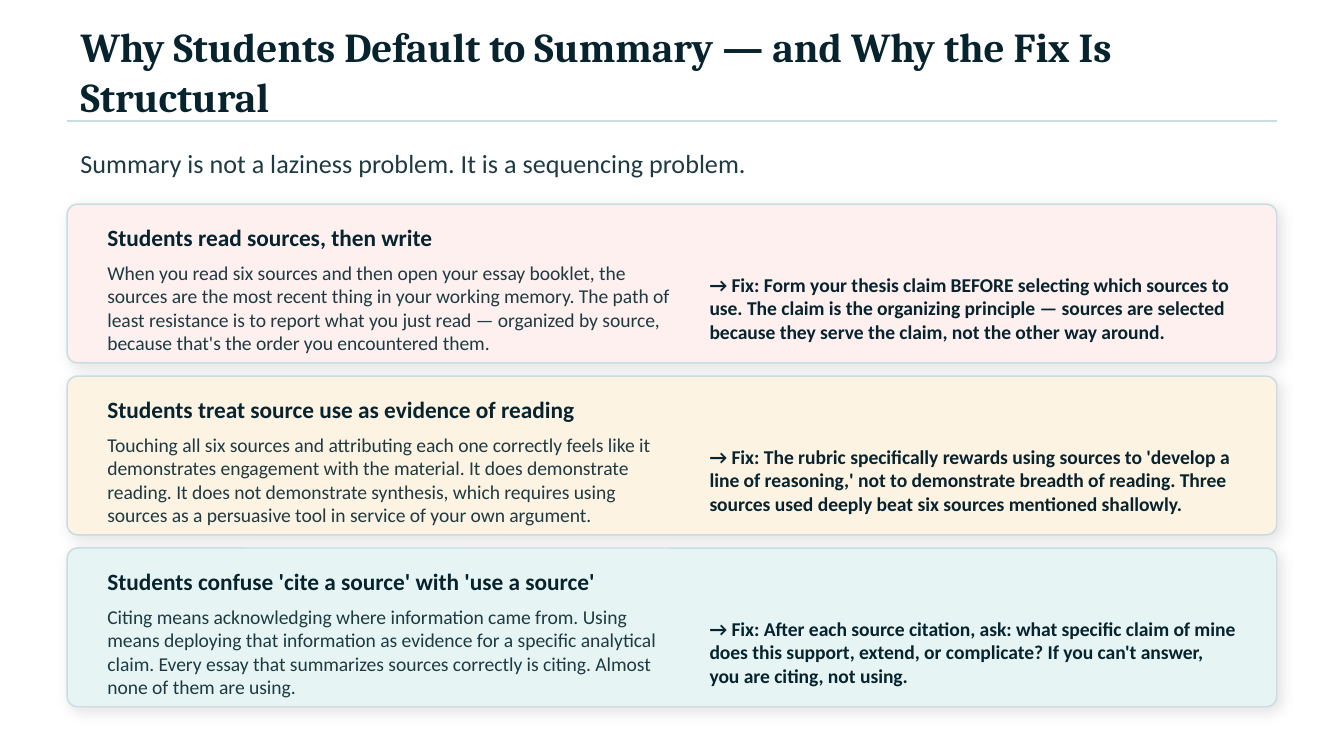
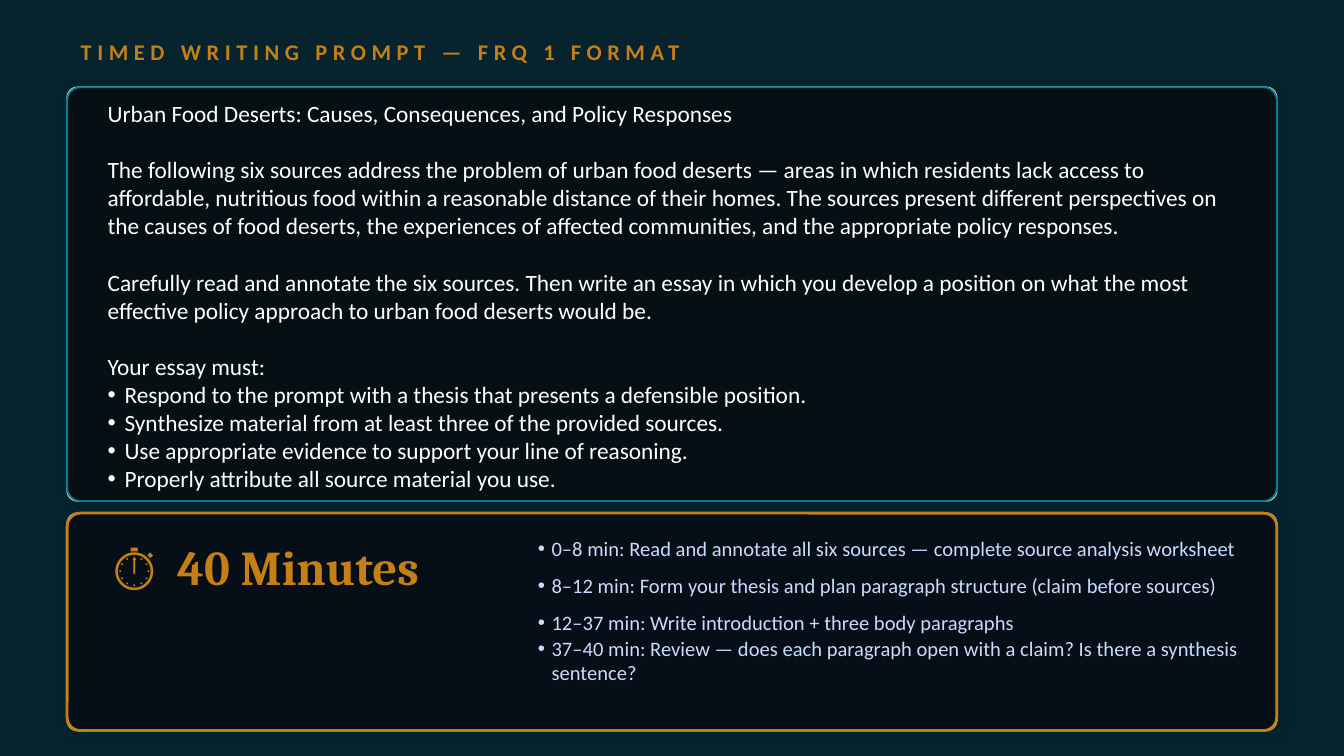
from dataclasses import dataclass

from lxml.etree import SubElement as Sub
from pptx import Presentation
from pptx.dml.color import RGBColor as Rgb
from pptx.enum.shapes import MSO_CONNECTOR as Link, MSO_SHAPE as Form
from pptx.enum.text import MSO_ANCHOR as Anchor, MSO_AUTO_SIZE as Fit, PP_ALIGN as Align
from pptx.oxml.ns import qn
from pptx.util import Cm, Pt


@dataclass(frozen=True)
class Theme:
    head: str = "Cambria"
    text: str = "Calibri"
    ink: str = "07232E"
    slate: str = "1E3A42"
    rule: str = "C8DDE2"
    white: str = "FFFFFF"
    rose: str = "FDF0EF"
    cream: str = "FDF3E3"
    mint: str = "E6F5F3"
    coal: str = "060F14"
    night: str = "060E18"
    teal: str = "028090"
    gold: str = "C47F17"
    ice: str = "CADCFC"
    title: float = 22
    lead: float = 14
    label: float = 12.5
    note: float = 10.5
    brow: float = 12
    step: float = 11
    clock: float = 26


@dataclass(frozen=True)
class Line:
    """One paragraph: gap is the space before (pt), hang the bullet indent (cm)."""
    text: str
    gap: float = 0
    hang: float = 0


T = Theme()
LEFT, WIDE = 1.27, 22.86
INNER, SPAN = 1.78, 21.84

CAUSES = [
    (T.rose, "Students read sources, then write",
     "When you read six sources and then open your essay booklet, the sources are the most "
     "recent thing in your working memory. The path of least resistance is to report what you "
     "just read — organized by source, because that's the order you encountered them.",
     "→ Fix: Form your thesis claim BEFORE selecting which sources to use. The claim is the "
     "organizing principle — sources are selected because they serve the claim, not the other "
     "way around."),
    (T.cream, "Students treat source use as evidence of reading",
     "Touching all six sources and attributing each one correctly feels like it demonstrates "
     "engagement with the material. It does demonstrate reading. It does not demonstrate "
     "synthesis, which requires using sources as a persuasive tool in service of your own "
     "argument.",
     "→ Fix: The rubric specifically rewards using sources to 'develop a line of reasoning,' "
     "not to demonstrate breadth of reading. Three sources used deeply beat six sources "
     "mentioned shallowly."),
    (T.mint, "Students confuse 'cite a source' with 'use a source'",
     "Citing means acknowledging where information came from. Using means deploying that "
     "information as evidence for a specific analytical claim. Every essay that summarizes "
     "sources correctly is citing. Almost none of them are using.",
     "→ Fix: After each source citation, ask: what specific claim of mine does this support, "
     "extend, or complicate? If you can't answer, you are citing, not using."),
]

BREAK = 15.25
PROMPT = [
    Line("Urban Food Deserts: Causes, Consequences, and Policy Responses"),
    Line("The following six sources address the problem of urban food deserts — areas in which "
         "residents lack access to affordable, nutritious food within a reasonable distance of "
         "their homes. The sources present different perspectives on the causes of food deserts, "
         "the experiences of affected communities, and the appropriate policy responses.", BREAK),
    Line("Carefully read and annotate the six sources. Then write an essay in which you develop "
         "a position on what the most effective policy approach to urban food deserts would be.",
         BREAK),
    Line("Your essay must:", BREAK),
] + [Line(task, hang=0.32) for task in (
    "Respond to the prompt with a thesis that presents a defensible position.",
    "Synthesize material from at least three of the provided sources.",
    "Use appropriate evidence to support your line of reasoning.",
    "Properly attribute all source material you use.")]

STEPS = [Line(step, gap, 0.26) for step, gap in (
    ("0–8 min: Read and annotate all six sources — complete source analysis worksheet", 0),
    ("8–12 min: Form your thesis and plan paragraph structure (claim before sources)", 6.7),
    ("12–37 min: Write introduction + three body paragraphs", 6.7),
    ("37–40 min: Review — does each paragraph open with a claim? Is there a synthesis sentence?",
     0.5))]


def write(shape, lines, size, color, font=T.text, bold=False, track=0, tab=0,
          anchor=Anchor.MIDDLE):
    """Fill a shape with text; track is letter spacing (pt), tab a tab stop (cm)."""
    frame = shape.text_frame
    frame.word_wrap, frame.auto_size = True, Fit.NONE
    frame.vertical_anchor = anchor
    if isinstance(lines, str):
        lines = [Line(lines)]
    for i, line in enumerate(lines):
        para = frame.paragraphs[0] if i == 0 else frame.add_paragraph()
        props = para._p.get_or_add_pPr()
        props.set("marL", str(Cm(line.hang)))
        props.set("indent", str(-Cm(line.hang)))
        if line.hang:
            Sub(props, qn("a:buChar"), char="•")
        else:
            Sub(props, qn("a:buNone"))
        if tab:
            stops = Sub(props, qn("a:tabLst"))
            Sub(stops, qn("a:tab"), pos=str(Cm(tab)), algn="l")
        para.alignment = Align.LEFT
        para.space_before = Pt(line.gap)
        run = para.add_run()
        run.text = line.text
        run.font.name, run.font.size, run.font.bold = font, Pt(size), bold
        run.font.color.rgb = Rgb.from_string(color)
        if track:
            run.font._element.set("spc", str(track * 100))


def label(slide, box, lines, **form):
    write(slide.shapes.add_textbox(*map(Cm, box)), lines, **form)


def fill_slot(slot, box, lines, **form):
    """Move a placeholder to the box, bring it to the front and fill it."""
    slot.left, slot.top, slot.width, slot.height = map(Cm, box)
    slot.element.getparent().append(slot.element)
    write(slot, lines, **form)


def panel(slide, top, high, fill, edge=T.rule, thick=0.8, curve=0.2, shade=True):
    """Draw a full-width rounded box; curve is the corner radius (cm)."""
    box = slide.shapes.add_shape(Form.ROUNDED_RECTANGLE, *map(Cm, (LEFT, top, WIDE, high)))
    box.adjustments[0] = curve / high
    box.fill.solid()
    box.fill.fore_color.rgb = Rgb.from_string(fill)
    box.line.color.rgb = Rgb.from_string(edge)
    box.line.width = Pt(thick)
    box.shadow.inherit = False
    if shade:
        glow = Sub(box.element.spPr.find(qn("a:effectLst")), qn("a:outerShdw"),
                   blurRad=str(Pt(7)), dist=str(Pt(2)), dir="2700000",
                   algn="bl", rotWithShape="0")
        tone = Sub(glow, qn("a:srgbClr"), val="000000")
        Sub(tone, qn("a:alpha"), val="9000")


def framed(slide, top, high, fill, edge, thick):
    """A shaded panel with a bright frame laid over it."""
    panel(slide, top, high, fill)
    panel(slide, top, high, fill, edge, thick, curve=0.25, shade=False)


def rule(slide, top):
    line = slide.shapes.add_connector(Link.STRAIGHT, *map(Cm, (LEFT, top, LEFT + WIDE, top)))
    line.line.color.rgb = Rgb.from_string(T.rule)
    line.line.width = Pt(1.2)
    Sub(line._element.spPr, qn("a:effectLst"))


def start(deck, layout, back):
    slide = deck.slides.add_slide(deck.slide_layouts[layout])
    slide.background.fill.solid()
    slide.background.fill.fore_color.rgb = Rgb.from_string(back)
    return slide


def causes(deck):
    slide = start(deck, 5, T.white)
    fill_slot(slide.shapes.title, (LEFT, 0.56, WIDE, 1.57),
              "Why Students Default to Summary — and Why the Fix Is Structural",
              size=T.title, color=T.ink, font=T.head, bold=True)
    rule(slide, 2.29)
    label(slide, (LEFT, 2.54, WIDE, 1.07),
          "Summary is not a laziness problem. It is a sequencing problem.",
          size=T.lead, color=T.slate)
    for i, (fill, head, why, fix) in enumerate(CAUSES):
        top = 3.86 + i * 3.25
        panel(slide, top, 3, fill)
        label(slide, (INNER, top + 0.2, SPAN, 0.86), head,
              size=T.label, color=T.ink, bold=True)
        label(slide, (INNER, top + 1.12, 11.18, 1.68), why, size=T.note, color=T.slate)
        label(slide, (13.16, top + 1.12, 10.48, 1.68), fix,
              size=T.note, color=T.ink, bold=True)


def prompt(deck):
    slide = start(deck, 3, T.ink)
    title, task, plan = slide.placeholders
    fill_slot(title, (LEFT, 0.46, WIDE, 1.02), "TIMED WRITING PROMPT — FRQ 1 FORMAT",
              size=T.brow, color=T.gold, bold=True, track=3)
    framed(slide, 1.65, 7.82, T.coal, T.teal, 1)
    fill_slot(task, (INNER, 1.93, SPAN, 7.32), PROMPT, size=T.label, color=T.white)
    framed(slide, 9.7, 4.11, T.night, T.gold, 1.5)
    label(slide, (1.83, 9.96, 7.62, 1.47), "⏱\t40 Minutes",
          size=T.clock, color=T.gold, font=T.head, bold=True, tab=1.3)
    fill_slot(plan, (9.91, 10, 13.84, 2.84), STEPS,
              size=T.step, color=T.ice, anchor=Anchor.TOP)


def main():
    deck = Presentation()
    deck.slide_width, deck.slide_height = Cm(25.4), Cm(14.29)
    causes(deck)
    prompt(deck)
    deck.save("out.pptx")


if __name__ == "__main__":
    main()
